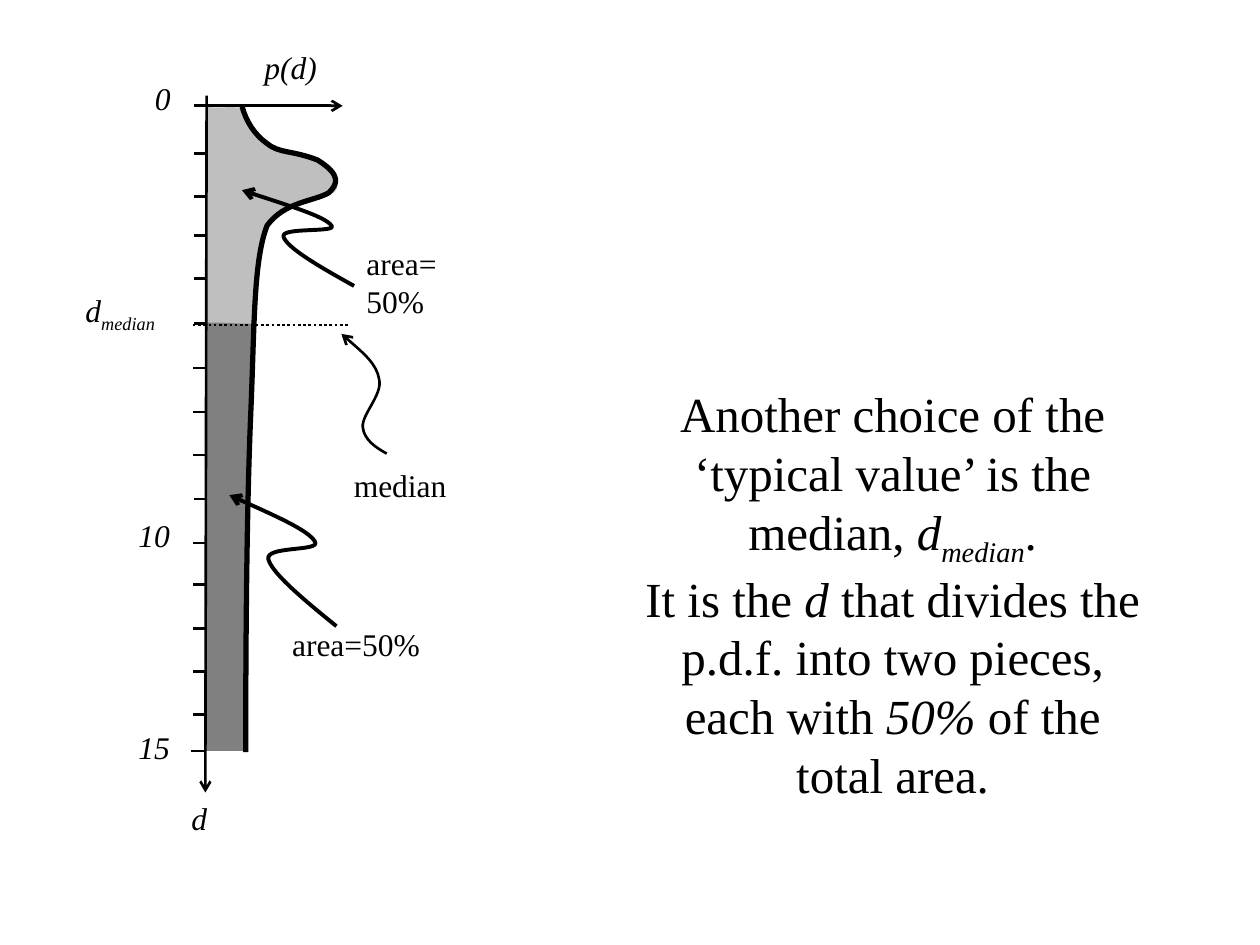
from dataclasses import dataclass

from lxml.etree import SubElement
from pptx import Presentation
from pptx.dml.color import RGBColor
from pptx.enum.dml import MSO_LINE_DASH_STYLE as Dash
from pptx.enum.shapes import MSO_CONNECTOR_TYPE as ConnectorType
from pptx.enum.text import MSO_ANCHOR as Anchor, MSO_AUTO_SIZE as AutoSize, PP_ALIGN as Align
from pptx.oxml.ns import qn
from pptx.util import Cm, Pt


@dataclass(frozen=True)
class Theme:
    font: str = "Times New Roman"
    ink: RGBColor = RGBColor(0, 0, 0)
    upper_area: RGBColor = RGBColor(0xBF, 0xBF, 0xBF)
    lower_area: RGBColor = RGBColor(0x80, 0x80, 0x80)
    label_size: float = 18
    body_size: float = 28
    thin: float = 1.5
    medium: float = 2.25
    thick: float = 3


def length(inches):
    return Cm(inches * 2.54)


def bend(shape):
    """Turn each three line segments of a freeform into one cubic curve."""
    lines = list(shape._element.iter(qn("a:lnTo")))
    for first in range(0, len(lines), 3):
        curve = lines[first]
        curve.tag = qn("a:cubicBezTo")
        for line in lines[first + 1:first + 3]:
            curve.append(line[0])
            line.getparent().remove(line)


class SlideBuilder:
    def __init__(self, slide, theme):
        self.slide = slide
        self.theme = theme

    def style_line(self, shape, width, head=False, tail=False):
        shape.line.color.rgb = self.theme.ink
        shape.line.width = Pt(width)
        for wanted, tag in ((head, "a:headEnd"), (tail, "a:tailEnd")):
            if wanted:
                SubElement(shape.line._get_or_add_ln(), qn(tag), type="arrow")

    def line(self, x1, y1, x2, y2, arrow=False, dash=None):
        connector = self.slide.shapes.add_connector(
            ConnectorType.STRAIGHT, *map(length, (x1, y1, x2, y2)))
        if dash:
            connector.line.dash_style = dash
        self.style_line(connector, self.theme.thin, tail=arrow)
        SubElement(connector._element.spPr, qn("a:effectLst"))

    def outline(self, start, segments, closed):
        """A segment is a cubic curve: two control points and an end point."""
        points = [(length(x), length(y)) for segment in segments
                  for x, y in zip(segment[::2], segment[1::2])]
        builder = self.slide.shapes.build_freeform(*map(length, start))
        builder.add_line_segments(points, close=closed)
        shape = builder.convert_to_shape()
        bend(shape)
        shape.shadow.inherit = False
        return shape

    def area(self, start, segments, color):
        shape = self.outline(start, segments, closed=True)
        shape.fill.solid()
        shape.fill.fore_color.rgb = color
        shape.line.fill.background()

    def curve(self, start, segments, width, arrow=True):
        shape = self.outline(start, segments, closed=False)
        shape.fill.background()
        self.style_line(shape, width, head=arrow)

    def text(self, left, top, width, height, paragraphs, size=None, body=False):
        """A run is (text, style); style holds i for italic, s for subscript."""
        box = self.slide.shapes.add_textbox(*map(length, (left, top, width, height)))
        frame = box.text_frame
        frame.word_wrap = True
        frame.auto_size = AutoSize.NONE if body else AutoSize.SHAPE_TO_FIT_TEXT
        frame.vertical_anchor = Anchor.MIDDLE if body else Anchor.TOP
        for index, runs in enumerate(paragraphs):
            paragraph = frame.add_paragraph() if index else frame.paragraphs[0]
            paragraph.alignment = Align.CENTER if body else Align.LEFT
            font = paragraph.font
            font.name = self.theme.font
            font.size = Pt(size or self.theme.label_size)
            font.color.rgb = self.theme.ink
            for content, style in runs:
                run = paragraph.add_run()
                run.text = content
                run.font.italic = "i" in style
                if "s" in style:
                    run._r.get_or_add_rPr().set("baseline", "-25000")


def main():
    presentation = Presentation()
    presentation.slide_width, presentation.slide_height = length(10), length(7.5)
    slide = presentation.slides.add_slide(presentation.slide_layouts[6])
    theme = Theme()
    builder = SlideBuilder(slide, theme)

    # Two halves of the area under the density curve
    builder.area((1.65, 0.85), [
        (1.79, 0.86, 1.82, 0.84, 1.93, 0.86), (1.92, 0.88, 1.95, 0.92, 1.96, 0.96),
        (1.98, 1, 1.99, 1.04, 2.04, 1.08), (2.08, 1.12, 2.16, 1.17, 2.23, 1.2),
        (2.31, 1.23, 2.43, 1.24, 2.49, 1.26), (2.56, 1.29, 2.6, 1.31, 2.63, 1.34),
        (2.67, 1.37, 2.68, 1.42, 2.68, 1.46), (2.68, 1.5, 2.66, 1.53, 2.61, 1.55),
        (2.57, 1.58, 2.46, 1.57, 2.4, 1.59), (2.34, 1.61, 2.28, 1.64, 2.24, 1.67),
        (2.2, 1.7, 2.19, 1.73, 2.16, 1.76), (2.14, 1.8, 2.12, 1.82, 2.1, 1.88),
        (2.08, 1.95, 2.06, 2.07, 2.05, 2.17), (2.04, 2.26, 2.04, 2.37, 2.03, 2.44),
        (2.03, 2.51, 2.01, 2.51, 2.03, 2.59), (1.96, 2.63, 1.97, 2.63, 1.65, 2.64),
        (1.63, 2.33, 1.63, 1.64, 1.65, 0.85),
    ], theme.upper_area)
    builder.area((1.63, 2.56), [
        (1.85, 2.56, 1.83, 2.57, 2.01, 2.57), (2, 2.82, 1.98, 3.39, 1.97, 3.95),
        (1.95, 4.52, 1.95, 5.62, 1.94, 5.96), (1.68, 5.96, 1.96, 5.96, 1.62, 5.96),
        (1.64, 5.36, 1.63, 3.11, 1.63, 2.56),
    ], theme.lower_area)

    # Axes and ticks
    builder.line(1.64, 0.76, 1.63, 6.29, arrow=True)
    builder.line(1.54, 0.84, 2.72, 0.84, arrow=True)
    ticks = {
        1.64: (1.22, 1.56, 1.87, 2.21, 2.57, 3.96),
        1.63: (2.92, 3.27, 3.61, 4.31, 4.64, 4.99, 5.33, 5.67),
        1.62: (5.96,),
    }
    for right, heights in ticks.items():
        for y in heights:
            builder.line(right, y, right - 0.1, y)

    # Density curve and median level
    builder.curve((1.92, 0.84), [
        (1.95, 0.96, 2.02, 1.07, 2.12, 1.14), (2.22, 1.22, 2.31, 1.19, 2.52, 1.27),
        (2.71, 1.39, 2.68, 1.46, 2.61, 1.53), (2.49, 1.6, 2.26, 1.6, 2.12, 1.79),
        (2.01, 2.07, 2.02, 2.59, 1.99, 3.29), (1.96, 3.99, 1.95, 4.98, 1.95, 5.97),
    ], theme.thick, arrow=False)
    builder.line(1.53, 2.58, 2.77, 2.58, dash=Dash.ROUND_DOT)

    # Wavy pointers from the labels
    builder.curve((2.71, 2.65), [
        (2.85, 2.77, 2.99, 2.89, 3.01, 3.01), (3.04, 3.13, 2.87, 3.29, 2.88, 3.39),
        (2.89, 3.49, 2.98, 3.55, 3.07, 3.6)], theme.thin)
    builder.curve((1.82, 3.93), [
        (2.13, 4.07, 2.45, 4.21, 2.5, 4.3), (2.55, 4.38, 2.1, 4.33, 2.13, 4.44),
        (2.16, 4.55, 2.41, 4.76, 2.67, 4.97)], theme.medium)
    builder.curve((1.92, 1.51), [
        (2.25, 1.62, 2.58, 1.72, 2.63, 1.79), (2.69, 1.85, 2.22, 1.8, 2.25, 1.88),
        (2.28, 1.97, 2.54, 2.12, 2.81, 2.27)], theme.medium)

    # Labels
    for left, top, width, content, style in (
        (1.13, 0.58, 0.59, "0", "i"),
        (1, 4.05, 0.72, "10", "i"),
        (1, 5.73, 0.72, "15", "i"),
        (1.42, 6.29, 0.59, "d", "i"),
        (2, 0.33, 1, "p(d)", "i"),
        (2.71, 3.65, 1.12, "median", ""),
        (2.22, 4.91, 1.53, "area=50%", ""),
    ):
        builder.text(left, top, width, 0.4, [[(content, style)]])
    median_symbol = [("d", "i"), ("median", "is")]
    builder.text(0.58, 2.26, 1.04, 0.4, [median_symbol])
    builder.text(2.81, 1.89, 1.19, 0.71, [[("area=", "")], [("50%", "")]])

    # Explanation
    builder.text(5, 3, 4.17, 3.42, [
        [("Another choice of the ‘typical value’ is the median, ", ""),
         *median_symbol, (".", "")],
        [("It is the ", ""), ("d", "i"),
         (" that divides the p.d.f. into two pieces, each with ", ""),
         ("50% ", "i"), ("of the total area.", "")],
    ], size=theme.body_size, body=True)

    presentation.save("out.pptx")


if __name__ == "__main__":
    main()
